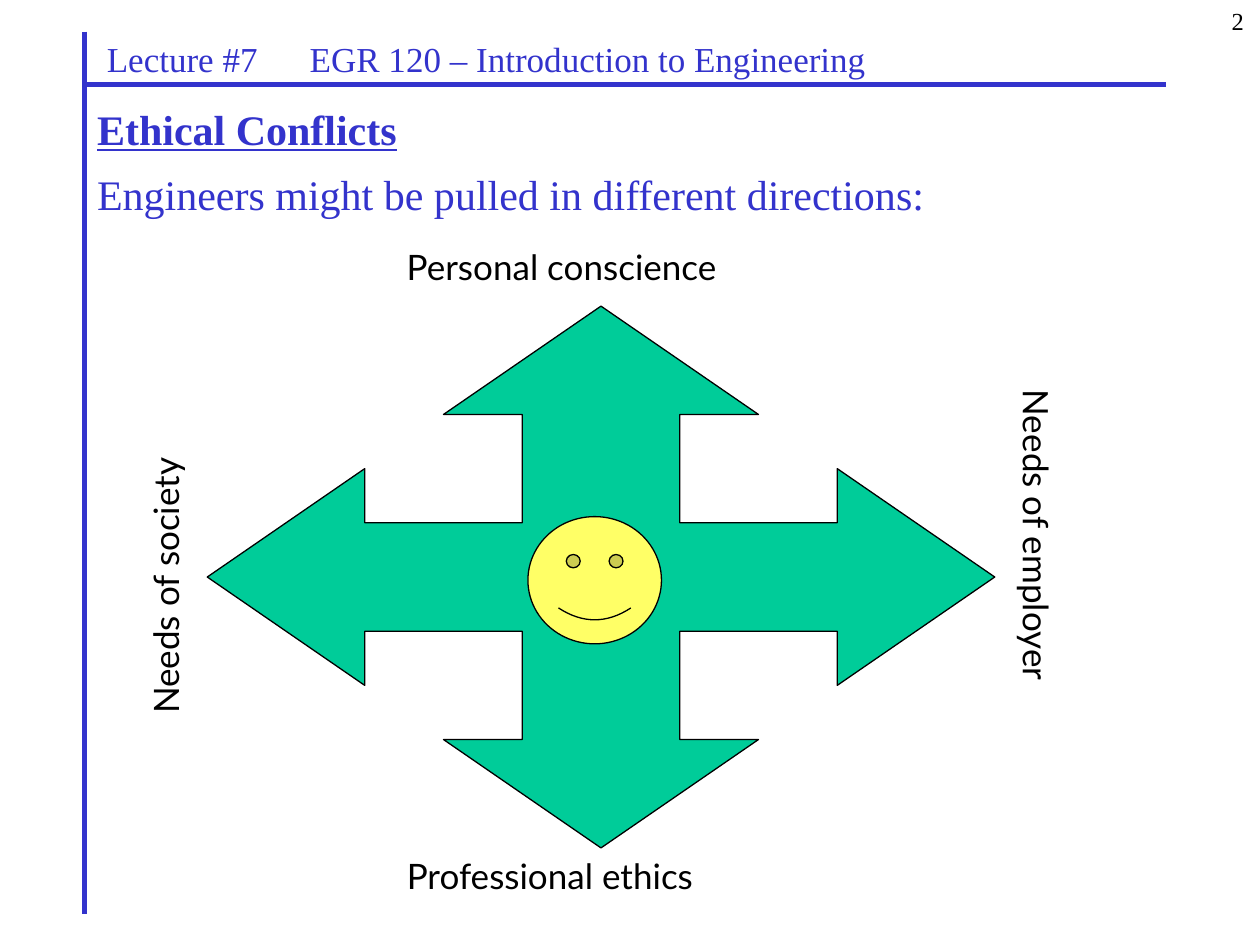
import pptx
import pptx.dml.color
import pptx.enum.shapes
import pptx.enum.text
import pptx.oxml
import pptx.oxml.ns
import pptx.util
from pptx.util import Inches

COLORS = {"blue": "3333CC", "black": "000000", "green": "00CC99", "yellow": "FFFF66"}
SERIF, SANS = "Times New Roman", "Lato"


def rgb(name):
    return pptx.dml.color.RGBColor.from_string(COLORS[name])


def style_paragraph(paragraph, size, font, color, bold=False, underline=False):
    for run in paragraph.runs:
        run.font.size = pptx.util.Pt(size)
        run.font.name = font
        run.font.color.rgb = rgb(color)
        run.font.bold = bold
        run.font.underline = underline


def add_label(slide, text, left, top, width, height, size=20, font=SANS,
              color="black", rotation=0, align=pptx.enum.text.PP_ALIGN.LEFT):
    label = slide.shapes.add_textbox(Inches(left), Inches(top), Inches(width), Inches(height))
    label.rotation = rotation
    label.text_frame.word_wrap = True
    paragraph = label.text_frame.paragraphs[0]
    paragraph.text = text
    paragraph.alignment = align
    style_paragraph(paragraph, size, font, color)
    return paragraph


def add_tab_stop(paragraph, position):
    properties = paragraph._p.get_or_add_pPr()
    tabs = pptx.oxml.parse_xml(
        f'<a:tabLst {pptx.oxml.ns.nsdecls("a")}>'
        f'<a:tab pos="{Inches(position)}" algn="l"/></a:tabLst>')
    properties.append(tabs)


def add_rule(slide, x1, y1, x2, y2):
    rule = slide.shapes.add_connector(
        pptx.enum.shapes.MSO_CONNECTOR.STRAIGHT,
        Inches(x1), Inches(y1), Inches(x2), Inches(y2))
    rule.line.color.rgb = rgb("blue")
    rule.line.width = pptx.util.Pt(3)
    rule._element.spPr.append(
        pptx.oxml.parse_xml(f'<a:effectLst {pptx.oxml.ns.nsdecls("a")}/>'))


def paint(shape, fill):
    shape.shadow.inherit = False
    shape.fill.solid()
    shape.fill.fore_color.rgb = rgb(fill)
    shape.line.color.rgb = rgb("black")
    shape.line.width = pptx.util.Pt(0.75)


def add_title(slide):
    title = slide.shapes.title
    title.left, title.top = Inches(0.67), Inches(0.77)
    title.width, title.height = Inches(7.64), Inches(1.56)
    frame = title.text_frame
    frame.text = "Ethical Conflicts\nEngineers might be pulled in different directions:"
    frame.word_wrap = True
    frame.auto_size = pptx.enum.text.MSO_AUTO_SIZE.NONE
    frame.vertical_anchor = pptx.enum.text.MSO_ANCHOR.TOP
    heading, lead = frame.paragraphs
    for paragraph in (heading, lead):
        paragraph.alignment = pptx.enum.text.PP_ALIGN.LEFT
        paragraph.line_spacing = 1.0
    lead.space_before = pptx.util.Pt(8.3)
    style_paragraph(heading, 24, SERIF, "blue", bold=True, underline=True)
    style_paragraph(lead, 24, SERIF, "blue")


def add_four_way_arrow(slide, center_x, center_y, step_x, step_y):
    # One arm from tip to the next arm's tip, in grid steps; quarter turns give the rest
    arm = [(0, -5), (2, -3), (1, -3), (1, -1), (3, -1), (3, -2)]
    outline = []
    for _ in range(4):
        outline += arm
        arm = [(-y, x) for x, y in arm]
    points = [(Inches(center_x + x * step_x), Inches(center_y + y * step_y))
              for x, y in outline]
    builder = slide.shapes.build_freeform(*points[0])
    builder.add_line_segments(points[1:], close=True)
    paint(builder.convert_to_shape(), "green")


def add_smiley(slide, left, top, width, height):
    smiley = slide.shapes.add_shape(
        pptx.enum.shapes.MSO_SHAPE.SMILEY_FACE,
        Inches(left), Inches(top), Inches(width), Inches(height))
    smiley.adjustments[0] = 0.05
    paint(smiley, "yellow")


def main():
    deck = pptx.Presentation()
    deck.slide_width, deck.slide_height = Inches(10), Inches(7.5)
    slide = deck.slides.add_slide(deck.slide_layouts[5])

    # Page number, title and lead sentence
    add_label(slide, "2", 7.89, 0, 2.08, 0.5, size=14, font=SERIF,
              align=pptx.enum.text.PP_ALIGN.RIGHT)
    add_title(slide)

    # Course header with its rules
    add_rule(slide, 0.67, 0.25, 0.67, 7.25)
    add_rule(slide, 0.67, 0.67, 9.25, 0.67)
    header = add_label(slide, "Lecture #7\tEGR 120 – Introduction to Engineering",
                       0.75, 0.25, 7.1, 0.33, font=SERIF, color="blue")
    add_tab_stop(header, 1.61)

    # Four directions pulling on the engineer
    add_four_way_arrow(slide, 4.77, 4.58, 0.625, 0.43)
    add_label(slide, "Personal conscience", 3.13, 1.9, 3.5, 0.53)
    add_label(slide, "Professional ethics", 3.13, 6.73, 3.18, 0.53)
    add_label(slide, "Needs of society", -0.02, 4.1, 2.78, 0.55, rotation=270)
    add_label(slide, "Needs of employer", 6.53, 4.36, 3.28, 0.55, rotation=90)
    add_smiley(slide, 4.19, 4.1, 1.06, 1.01)

    deck.save("out.pptx")


if __name__ == "__main__":
    main()
